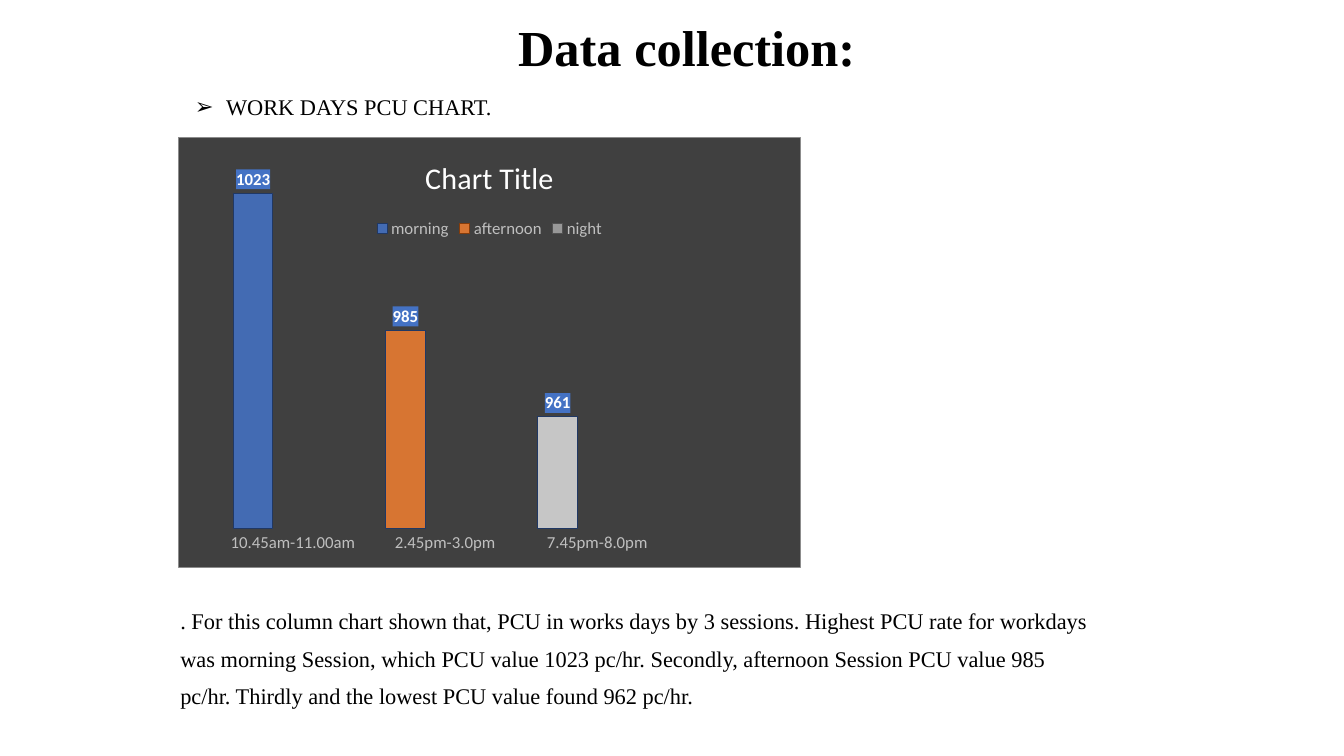
import pptx
import pptx.util
import pptx.dml.color
import pptx.chart.data
import pptx.enum.chart
import pptx.enum.text
import pptx.oxml
import pptx.oxml.ns

Inches, Pt = pptx.util.Inches, pptx.util.Pt
enum = pptx.enum.chart
align = pptx.enum.text.PP_ALIGN
anchor = pptx.enum.text.MSO_ANCHOR
ns = pptx.oxml.ns.nsdecls("a", "c")

SERIF, SANS = "Times New Roman", "Calibri"
HEAD = "Data collection:"
LEAD = "WORK DAYS PCU CHART."
NOTE = (". For this column chart shown that, PCU in works days by 3 sessions. "
        "Highest PCU rate for workdays was morning Session, which PCU value "
        "1023 pc/hr. Secondly, afternoon Session PCU value 985 pc/hr. Thirdly "
        "and the lowest PCU value found 962 pc/hr.")
CATS = ["10.45am-11.00am", "2.45pm-3.0pm", "7.45pm-8.0pm"]
# name, values, fill, line
SERIES = [
    ("morning", [1023, 985, 961], "4472C4", "203864"),
    ("afternoon", [None] * 3, "ED7D31", "843C0B"),
    ("night", [None] * 3, "A5A5A5", "525252"),
]
POINTS = {1: "ED7D31", 2: "D9D9D9"}
PLOT = {"x": 0.061, "y": 0.071, "w": 0.735, "h": 0.84}


def rgb(code):
    return pptx.dml.color.RGBColor.from_string(code)


def style(font, size, code, name, bold=False):
    font.size, font.name, font.bold = Pt(size), name, bold
    font.color.rgb = rgb(code)


def write(slide, at, text, size, bold=False, wrap=True):
    """Add a one-paragraph text box; return its frame and paragraph."""
    frame = slide.shapes.add_textbox(*map(Inches, at)).text_frame
    frame.word_wrap = wrap
    para = frame.paragraphs[0]
    run = para.add_run()
    run.text = text
    style(run.font, size, "000000", SERIF, bold)
    return frame, para


def back(node, fill, line=""):
    """Put a filled background ahead of the text settings of a chart part."""
    if line:
        line = (f'<a:ln w="6350"><a:solidFill><a:srgbClr val="{line}"/>'
                '</a:solidFill></a:ln>')
    node.find(pptx.oxml.ns.qn("c:txPr")).addprevious(pptx.oxml.parse_xml(
        f'<c:spPr {ns}><a:solidFill><a:srgbClr val="{fill}"/></a:solidFill>'
        f'{line}</c:spPr>'))


def paint(form, fill, line):
    form.fill.solid()
    form.fill.fore_color.rgb = rgb(fill)
    form.line.color.rgb = rgb(line)
    form.line.width = Pt(0.75)


def place(chart):
    """Fix the inner plot area inside the chart."""
    area = chart._chartSpace.xpath("c:chart/c:plotArea")[0]
    for old in area.xpath("c:layout"):
        area.remove(old)
    modes = "".join(f'<c:{k}Mode val="edge"/>' for k in "xy")
    spots = "".join(f'<c:{k} val="{v}"/>' for k, v in PLOT.items())
    area.insert(0, pptx.oxml.parse_xml(
        f'<c:layout {ns}><c:manualLayout><c:layoutTarget val="inner"/>'
        f'{modes}{spots}</c:manualLayout></c:layout>'))


def draw(slide):
    """Add the column chart."""
    data = pptx.chart.data.CategoryChartData()
    data.categories = CATS
    for name, vals, *_ in SERIES:
        data.add_series(name, vals)
    chart = slide.shapes.add_chart(
        enum.XL_CHART_TYPE.COLUMN_CLUSTERED,
        *map(Inches, (1.77, 1.36, 6.17, 4.27)), data).chart
    style(chart.font, 10, "000000", SANS)
    back(chart._chartSpace, "404040", "8C8C8C")
    place(chart)

    run = chart.chart_title.text_frame.paragraphs[0].add_run()
    run.text = "Chart Title"
    style(run.font, 21.5, "FFFFFF", SANS)
    chart.has_legend = True
    chart.legend.position = enum.XL_LEGEND_POSITION.TOP
    chart.legend.include_in_layout = False
    style(chart.legend.font, 12, "BFBFBF", SANS)

    cat, val = chart.category_axis, chart.value_axis
    cat.major_tick_mark = enum.XL_TICK_MARK.NONE
    cat.format.line.fill.background()
    style(cat.tick_labels.font, 12, "BFBFBF", SANS)
    val.minimum_scale, val.maximum_scale = 930, 1030
    val.has_major_gridlines = False
    val.visible = False

    plot = chart.plots[0]
    plot.gap_width, plot.overlap = 84, 0
    plot.vary_by_categories = False
    for ser, (_, _, fill, line) in zip(plot.series, SERIES):
        paint(ser.format, fill, line)
        if ser.name == "morning":
            for spot, code in POINTS.items():
                paint(ser.points[spot].format, code, line)
        tags = ser.data_labels
        tags.show_value = True
        tags.position = enum.XL_LABEL_POSITION.OUTSIDE_END
        style(tags.font, 12, "FFFFFF", SANS, True)
        back(tags._element, "4472C4")
        for clr in ser._element.xpath(
                "c:spPr/a:solidFill/a:srgbClr"
                " | c:dPt/c:spPr/a:solidFill/a:srgbClr"):
            clr.append(pptx.oxml.parse_xml(f'<a:alpha {ns} val="88000"/>'))


def main():
    deck = pptx.Presentation()
    deck.slide_width, deck.slide_height = Inches(13.33), Inches(7.5)
    slide = deck.slides.add_slide(deck.slide_layouts[6])

    frame, para = write(slide, (1.77, 0.67, 3.27, 0.57), LEAD, 16)
    frame.vertical_anchor = anchor.BOTTOM
    para.alignment, para.line_spacing = align.CENTER, 0.9
    props = para._p.get_or_add_pPr()
    props.set("marL", str(Inches(0.31)))
    props.set("indent", str(-Inches(0.31)))
    for xml in ('buFont {} typeface="Wingdings"', 'buChar {} char="➢"'):
        if xml.startswith("buFont"):
            xml = xml.replace("Wingdings", "Arial")
        props.append(pptx.oxml.parse_xml(f"<a:{xml.format(ns)}/>"))

    _, para = write(slide, (1.69, 5.87, 9.31, 1.25), NOTE, 16)
    para.line_spacing = 1.4
    draw(slide)
    frame, _ = write(slide, (5.04, 0.11, 3.58, 0.71), HEAD, 36, True, False)
    frame.auto_size = pptx.enum.text.MSO_AUTO_SIZE.SHAPE_TO_FIT_TEXT
    deck.save("out.pptx")


if __name__ == "__main__":
    main()
